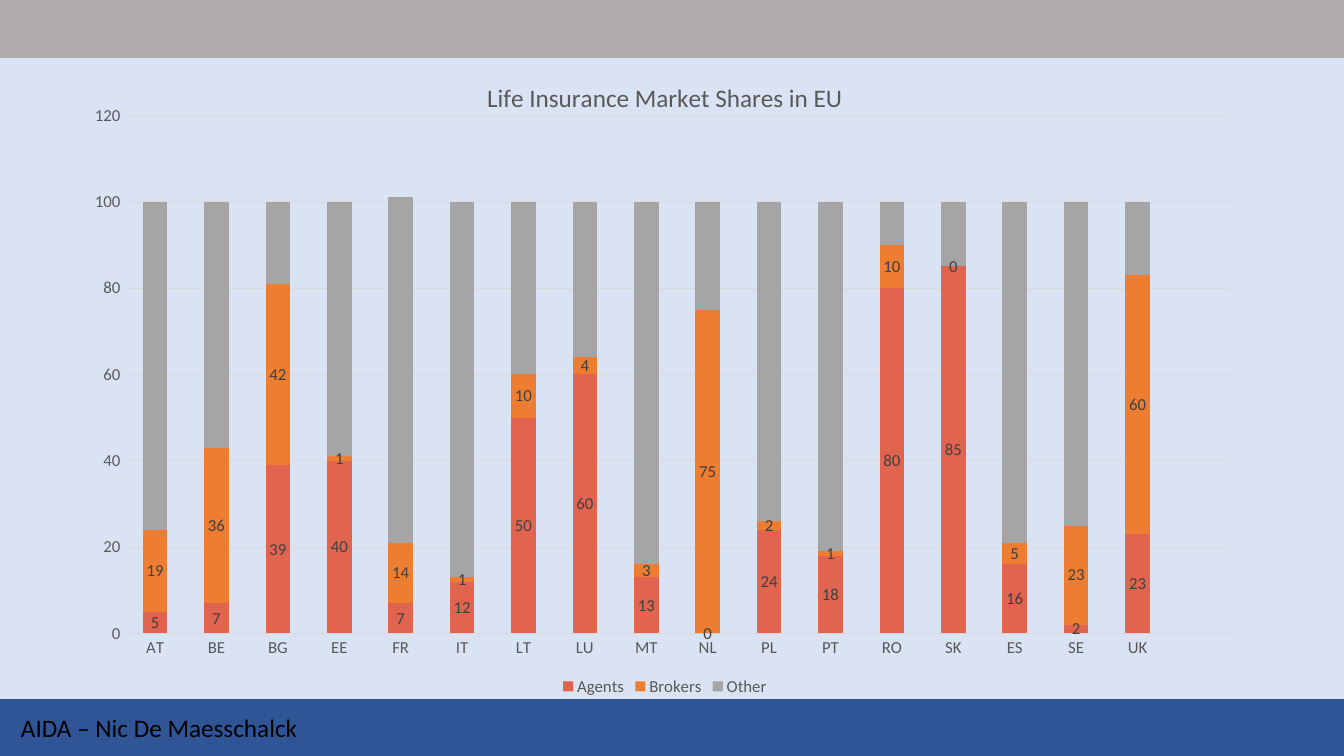
from lxml import etree
from pptx import Presentation
from pptx import util as u
from pptx.chart.data import CategoryChartData
from pptx.dml.color import RGBColor
from pptx.enum import chart as kinds, shapes, text
from pptx.oxml import ns

FONT = "Calibri"
PALE_BLUE = RGBColor(0xDA, 0xE3, 0xF3)
BAND_GREY = RGBColor(0xAF, 0xAB, 0xAB)
BAND_BLUE = RGBColor(0x2F, 0x55, 0x97)
BLACK = RGBColor(0, 0, 0)
TEXT_GREY = RGBColor(0x59, 0x59, 0x59)
LABEL_GREY = RGBColor(0x40, 0x40, 0x40)
GRID_GREY = RGBColor(0xD9, 0xD9, 0xD9)
RED = RGBColor(0xE1, 0x64, 0x4F)
ORANGE = RGBColor(0xED, 0x7D, 0x31)
GREY = RGBColor(0xA5, 0xA5, 0xA5)

TITLE = "Life Insurance Market Shares in EU"
FOOTER = "AIDA – Nic De Maesschalck"
COUNTRIES = ["AT", "BE", "BG", "EE", "FR", "IT", "LT", "LU", "MT",
             "NL", "PL", "PT", "RO", "SK", "ES", "SE", "UK", ""]
SHARES = [
    ("Agents", RED, True,
     [5, 7, 39, 40, 7, 12, 50, 60, 13, 0, 24, 18, 80, 85, 16, 2, 23, None]),
    ("Brokers", ORANGE, True,
     [19, 36, 42, 1, 14, 1, 10, 4, 3, 75, 2, 1, 10, 0, 5, 23, 60, None]),
    ("Other", GREY, False,
     [76, 57, 19, 59, 80, 87, 40, 36, 84, 25, 74, 81, 10, 15, 79, 75, 17, None]),
]
PLOT_AREA = {"x": 0.035, "y": 0.09, "w": 0.951, "h": 0.806}

WIDTH, HEIGHT, BAND = u.Cm(33.87), u.Cm(19.05), u.Cm(1.42)


def style(font, size, color):
    font.name = FONT
    font.size = u.Pt(size)
    font.bold = False
    font.color.rgb = color


def add_band(slide, top, color):
    band = slide.shapes.add_shape(
        shapes.MSO_SHAPE.RECTANGLE, 0, top, WIDTH, BAND)
    band.shadow.inherit = False
    band.fill.solid()
    band.fill.fore_color.rgb = color
    band.line.color.rgb = color
    band.line.width = u.Pt(1)


def add_footer(slide):
    box = slide.shapes.add_textbox(u.Cm(0.28), u.Cm(17.83), u.Cm(7.62), u.Cm(1.02))
    box.text_frame.word_wrap = False
    box.text_frame.vertical_anchor = text.MSO_ANCHOR.MIDDLE
    box.text_frame.text = FOOTER
    style(box.text_frame.paragraphs[0].runs[0].font, 18, BLACK)


def place_plot(chart):
    area = chart._chartSpace.find(".//" + ns.qn("c:plotArea"))
    for old in area.findall(ns.qn("c:layout")):
        area.remove(old)
    layout = etree.Element(ns.qn("c:layout"))
    manual = etree.SubElement(layout, ns.qn("c:manualLayout"))
    settings = {"layoutTarget": "inner", "xMode": "edge", "yMode": "edge", **PLOT_AREA}
    for name, value in settings.items():
        etree.SubElement(manual, ns.qn("c:" + name), val=str(value))
    area.insert(0, layout)


def style_axes(chart):
    for axis in (chart.category_axis, chart.value_axis):
        axis.major_tick_mark = axis.minor_tick_mark = kinds.XL_TICK_MARK.NONE
        style(axis.tick_labels.font, 12, TEXT_GREY)
    values = chart.value_axis
    values.minimum_scale, values.maximum_scale, values.major_unit = 0, 120, 20
    values.format.line.fill.background()
    values.has_major_gridlines = True
    for line in (chart.category_axis.format.line, values.major_gridlines.format.line):
        line.color.rgb = GRID_GREY
        line.width = u.Pt(0.75)


def add_share_chart(slide):
    data = CategoryChartData()
    data.categories = COUNTRIES
    for name, _, _, values in SHARES:
        data.add_series(name, values)
    chart = slide.shapes.add_chart(
        kinds.XL_CHART_TYPE.COLUMN_STACKED,
        u.Cm(2.11), u.Cm(1.45), u.Cm(29.29), u.Cm(16.2), data).chart
    style(chart.font, 10, BLACK)

    chart.has_title = True
    chart.chart_title.text_frame.text = TITLE
    style(chart.chart_title.text_frame.paragraphs[0].runs[0].font, 18, TEXT_GREY)
    chart.chart_title.include_in_layout = False

    chart.has_legend = True
    chart.legend.position = kinds.XL_LEGEND_POSITION.BOTTOM
    chart.legend.include_in_layout = False
    style(chart.legend.font, 12, TEXT_GREY)

    style_axes(chart)
    place_plot(chart)

    plot = chart.plots[0]
    plot.gap_width, plot.overlap = 150, 100
    plot.vary_by_categories = False
    for series, (_, color, labelled, _) in zip(plot.series, SHARES):
        series.format.fill.solid()
        series.format.fill.fore_color.rgb = color
        if labelled:
            labels = series.data_labels
            labels.show_value = True
            labels.position = kinds.XL_LABEL_POSITION.CENTER
            style(labels.font, 12, LABEL_GREY)


def main():
    deck = Presentation()
    deck.slide_width, deck.slide_height = WIDTH, HEIGHT
    slide = deck.slides.add_slide(deck.slide_layouts[6])
    slide.background.fill.solid()
    slide.background.fill.fore_color.rgb = PALE_BLUE
    add_band(slide, u.Cm(0.02), BAND_GREY)
    add_band(slide, HEIGHT - BAND, BAND_BLUE)
    add_footer(slide)
    add_share_chart(slide)
    deck.save("out.pptx")


if __name__ == "__main__":
    main()
